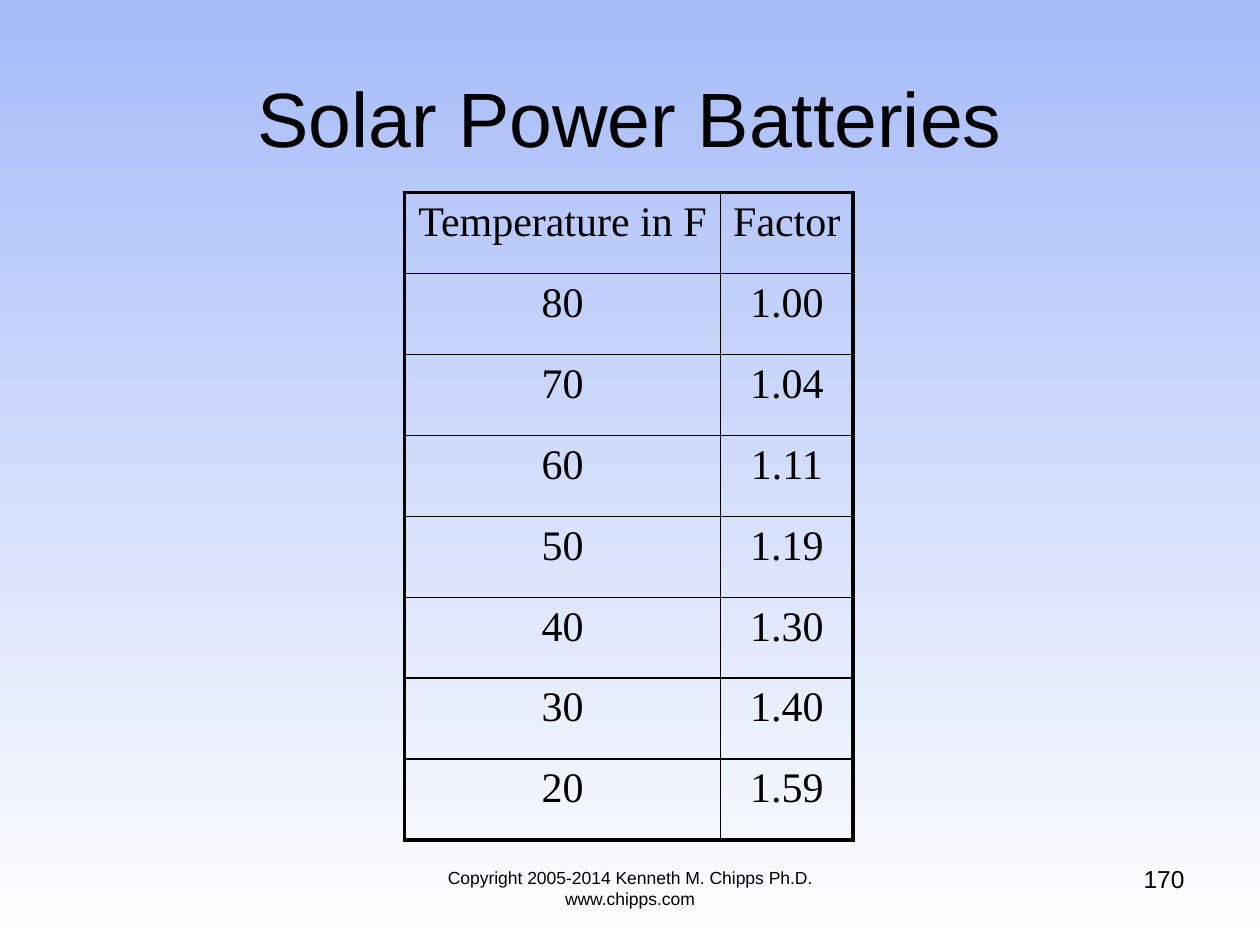
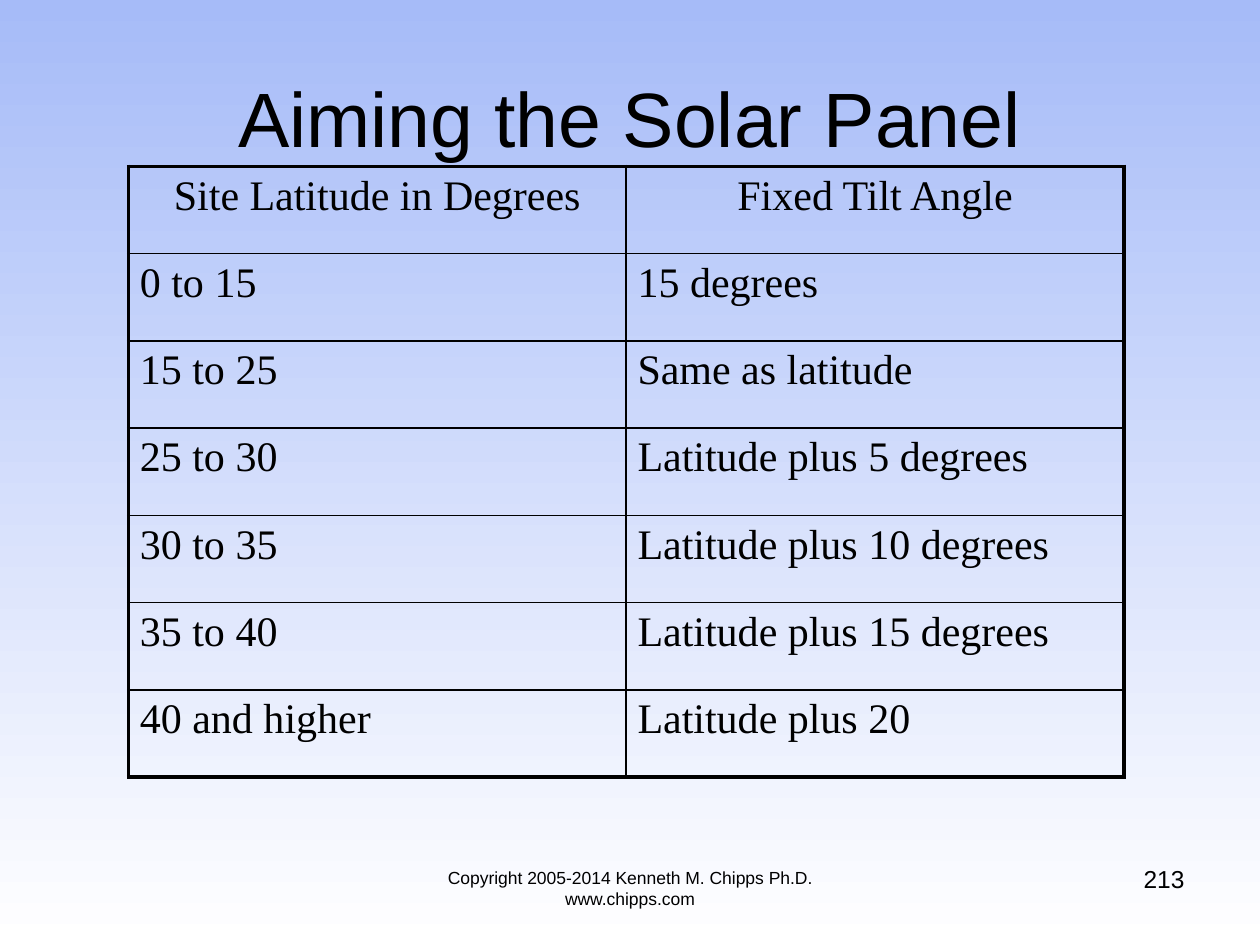
import pptx
import pptx.util
import pptx.dml.color
import pptx.enum.text
import pptx.oxml.ns
import lxml.etree

BLACK = pptx.dml.color.RGBColor(0x00, 0x00, 0x00)
SKY = pptx.dml.color.RGBColor(0xA6, 0xBB, 0xF8)
WHITE = pptx.dml.color.RGBColor(0xFF, 0xFF, 0xFF)
ALIGN = pptx.enum.text.PP_ALIGN
OUTER, INNER = 2.25, 1
SIDE_MARGIN = pptx.util.Inches(0.09)
COPYRIGHT = "Copyright 2005-2014 Kenneth M. Chipps Ph.D. www.chipps.com"

# Heading, page number, table left and top, column widths, table height,
# alignment of the entries, table rows
topics = [
    ("Solar Power Batteries", "170", 3.21, 1.53, [2.51, 1.05], 5.14, ALIGN.CENTER, [
        ("Temperature in F", "Factor"),
        ("80", "1.00"),
        ("70", "1.04"),
        ("60", "1.11"),
        ("50", "1.19"),
        ("40", "1.30"),
        ("30", "1.40"),
        ("20", "1.59"),
    ]),
    ("Aiming the Solar Panel", "213", 1.02, 1.32, [3.95, 3.95], 4.85, ALIGN.LEFT, [
        ("Site Latitude in Degrees", "Fixed Tilt Angle"),
        ("0 to 15", "15 degrees"),
        ("15 to 25", "Same as latitude"),
        ("25 to 30", "Latitude plus 5 degrees"),
        ("30 to 35", "Latitude plus 10 degrees"),
        ("35 to 40", "Latitude plus 15 degrees"),
        ("40 and higher", "Latitude plus 20"),
    ]),
]


def write(frame, text, size, font, align):
    frame.text = text
    frame.word_wrap = True
    paragraph = frame.paragraphs[0]
    paragraph.alignment = align
    for run in paragraph.runs:
        run.font.size = pptx.util.Pt(size)
        run.font.name = font
        run.font.color.rgb = BLACK


def draw_border(cell, side, width):
    properties = cell._tc.get_or_add_tcPr()
    line = lxml.etree.SubElement(properties, pptx.oxml.ns.qn("a:ln" + side),
                                 w=str(pptx.util.Pt(width)))
    fill = lxml.etree.SubElement(line, pptx.oxml.ns.qn("a:solidFill"))
    lxml.etree.SubElement(fill, pptx.oxml.ns.qn("a:srgbClr"), val=str(BLACK))


prs = pptx.Presentation()
prs.slide_width = pptx.util.Inches(10)
prs.slide_height = pptx.util.Inches(7.5)

# Shared background: sky blue fading down to white
sky = prs.slide_master.background.fill
sky.gradient()
sky.gradient_angle = 270
for stop, position, color in zip(sky.gradient_stops, (0, 1), (SKY, WHITE)):
    stop.position = position
    stop.color.rgb = color

# Shared title position
layout = prs.slide_layouts[5]
heading_area = layout.placeholders[0]
heading_area.left, heading_area.top, heading_area.width, heading_area.height = (
    pptx.util.Inches(length) for length in (0.5, 0.3, 9, 1.25))

for heading, page, left, top, widths, height, entry_align, rows in topics:
    slide = prs.slides.add_slide(layout)
    title = slide.shapes.title.text_frame
    write(title, heading, 44, "Arial", ALIGN.CENTER)
    title.vertical_anchor = pptx.enum.text.MSO_ANCHOR.MIDDLE

    # Lookup table with a heavy frame and thin inner rules
    lookup = slide.shapes.add_table(
        len(rows), len(widths), pptx.util.Inches(left), pptx.util.Inches(top),
        pptx.util.Inches(sum(widths)), pptx.util.Inches(height)).table
    lookup.first_row = lookup.horz_banding = False
    for column, width in zip(lookup.columns, widths):
        column.width = pptx.util.Inches(width)
    for r, entries in enumerate(rows):
        for c, entry in enumerate(entries):
            cell = lookup.cell(r, c)
            cell.margin_left = cell.margin_right = SIDE_MARGIN
            write(cell.text_frame, entry, 24, "Times New Roman",
                  ALIGN.CENTER if r == 0 else entry_align)
            on_frame = {"L": c == 0, "R": c == len(widths) - 1,
                        "T": r == 0, "B": r == len(rows) - 1}
            for side, outer in on_frame.items():
                draw_border(cell, side, OUTER if outer else INNER)
            cell.fill.background()

    # Page number and copyright line
    for text, x, y, width, size, align in (
            (page, 7.17, 6.81, 2.33, 14, ALIGN.RIGHT),
            (COPYRIGHT, 3, 6.83, 4, 10, ALIGN.CENTER)):
        footer = slide.shapes.add_textbox(*(
            pptx.util.Inches(length) for length in (x, y, width, 0.52)))
        write(footer.text_frame, text, size, "Arial", align)

prs.save("out.pptx")
